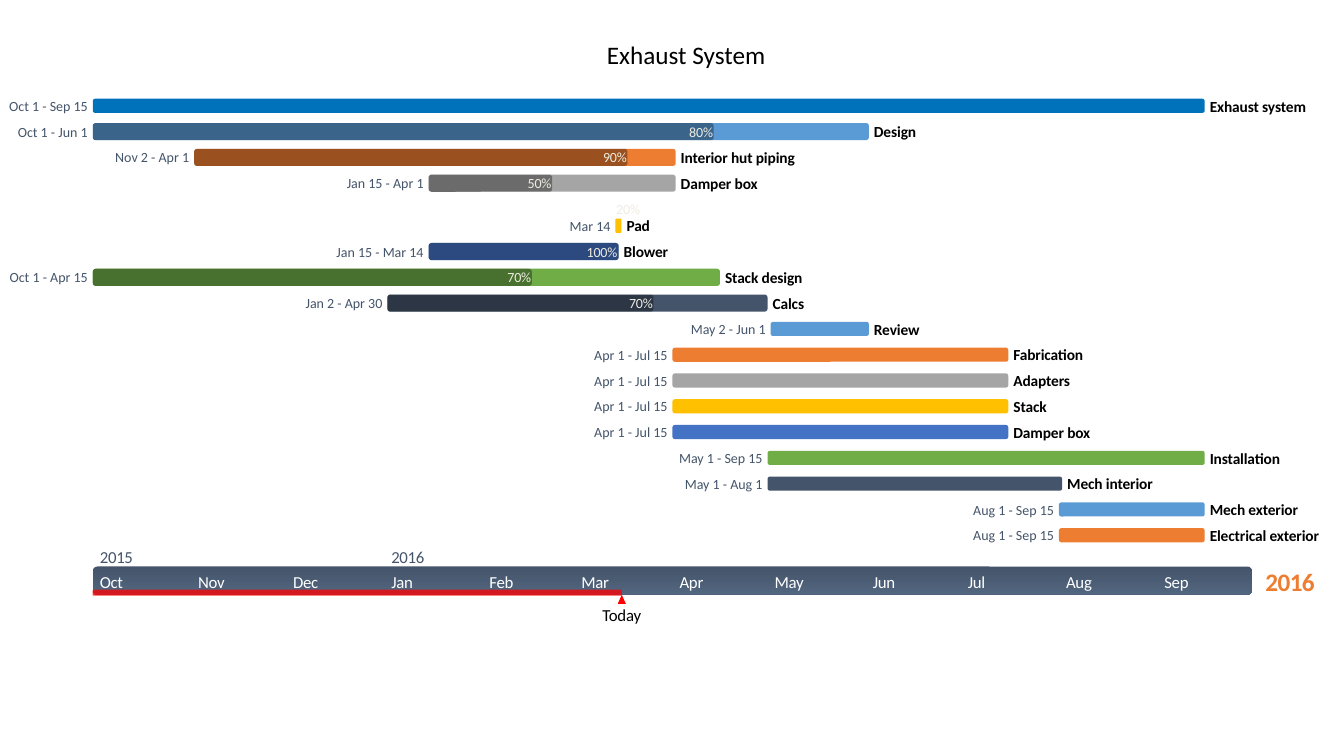
from lxml import etree
from pptx import Presentation
from pptx.dml.color import RGBColor
from pptx.enum.shapes import MSO_SHAPE
from pptx.enum.text import MSO_ANCHOR, PP_ALIGN
from pptx.oxml.ns import qn
from pptx.util import Inches, Pt

LEFT, CENTER, RIGHT = PP_ALIGN.LEFT, PP_ALIGN.CENTER, PP_ALIGN.RIGHT
MIDDLE = MSO_ANCHOR.MIDDLE
ROUNDED, TRIANGLE = MSO_SHAPE.ROUNDED_RECTANGLE, MSO_SHAPE.ISOSCELES_TRIANGLE

# Content
TITLE = "Exhaust System"
MONTHS = [("Oct", 31), ("Nov", 30), ("Dec", 31), ("Jan", 31), ("Feb", 29), ("Mar", 31),
          ("Apr", 30), ("May", 31), ("Jun", 30), ("Jul", 31), ("Aug", 31), ("Sep", 30)]
YEARS = [("2015", "Oct"), ("2016", "Jan")]
END_YEAR = "2016"
TODAY = "Mar 16"
TASKS = [  # name, dates, colour, percent complete
    ("Exhaust system", "Oct 1 - Sep 15", "ocean", None),
    ("Design", "Oct 1 - Jun 1", "sky", 80),
    ("Interior hut piping", "Nov 2 - Apr 1", "orange", 90),
    ("Damper box", "Jan 15 - Apr 1", "gray", 50),
    ("Pad", "Mar 14", "gold", 20),
    ("Blower", "Jan 15 - Mar 14", "blue", 100),
    ("Stack design", "Oct 1 - Apr 15", "green", 70),
    ("Calcs", "Jan 2 - Apr 30", "slate", 70),
    ("Review", "May 2 - Jun 1", "sky", None),
    ("Fabrication", "Apr 1 - Jul 15", "orange", None),
    ("Adapters", "Apr 1 - Jul 15", "gray", None),
    ("Stack", "Apr 1 - Jul 15", "gold", None),
    ("Damper box", "Apr 1 - Jul 15", "blue", None),
    ("Installation", "May 1 - Sep 15", "green", None),
    ("Mech interior", "May 1 - Aug 1", "slate", None),
    ("Mech exterior", "Aug 1 - Sep 15", "sky", None),
    ("Electrical exterior", "Aug 1 - Sep 15", "orange", None),
]
COLORS = {"ocean": "0072BC", "sky": "5B9BD5", "orange": "ED7D31", "gray": "A5A5A5",
          "gold": "FFC000", "blue": "4472C4", "green": "70AD47", "slate": "44546A",
          "slate_light": "52667F", "red": "FF0000", "black": "000000",
          "white": "FFFFFF", "cream": "EEECE1"}

# Text formats
TITLE_FMT = {"size": Pt(18), "bold": False}
DATE_FMT = {"size": Pt(10), "bold": False}
NAME_FMT = {"size": Pt(11), "bold": True}
AXIS_FMT = {"size": Pt(12), "bold": False}
YEAR_FMT = {"size": Pt(18), "bold": True}

# Layout in inches
AXIS_X, AXIS_Y, AXIS_W, AXIS_H = 0.92, 5.62, 11.5, 0.28
FIRST_ROW, PAD_ROW, LAST_ROW = 1.05, 2.24, 5.31
PAD_INDEX = 4
ROW_STEP = (LAST_ROW - PAD_ROW) / (len(TASKS) - 1 - PAD_INDEX)
GAP, MONTH_INSET, MIN_BAR = 0.05, 0.07, 0.06
DAY_W = AXIS_W / sum(days for _, days in MONTHS)

MONTH_START, elapsed = {}, 0
for month, days in MONTHS:
    MONTH_START[month] = elapsed
    elapsed += days


def date_x(date, days_after=0):
    month, day = date.split()
    return AXIS_X + (MONTH_START[month] + int(day) - 1 + days_after) * DAY_W


def row_center(i):
    if i < PAD_INDEX:
        return FIRST_ROW + i * ROW_STEP
    return PAD_ROW + (i - PAD_INDEX) * ROW_STEP


def format_text(tf, text, align, color, fmt, spacing):
    tf.margin_left = tf.margin_right = tf.margin_top = tf.margin_bottom = 0
    tf.word_wrap = True
    tf.vertical_anchor = MIDDLE
    p = tf.paragraphs[0]
    p.alignment = align
    r = p.add_run()
    r.text = text
    r.font.name = "Calibri"
    r.font.color.rgb = RGBColor.from_string(COLORS[color])
    for key, value in fmt.items():
        setattr(r.font, key, value)
    if spacing:
        r._r.get_or_add_rPr().set("spc", str(spacing))


def add_text(text, x, cy, w, h, align, color, fmt, spacing=0):
    tb = s.shapes.add_textbox(Inches(x), Inches(cy - h / 2), Inches(w), Inches(h))
    format_text(tb.text_frame, text, align, color, fmt, spacing)


def add_bar(x, y, w, h, color, alpha=100, kind=ROUNDED):
    sp = s.shapes.add_shape(kind, Inches(x), Inches(y), Inches(w), Inches(h))
    sp.shadow.inherit = False
    sp.line.fill.background()
    sp.fill.solid()
    sp.fill.fore_color.rgb = RGBColor.from_string(COLORS[color])
    if alpha < 100:
        clr = sp._element.spPr.find(qn("a:solidFill"))[0]
        etree.SubElement(clr, qn("a:alpha")).set("val", str(alpha * 1000))
    return sp


prs = Presentation()
prs.slide_width, prs.slide_height = Inches(13.33), Inches(7.5)
s = prs.slides.add_slide(prs.slide_layouts[5])

# Title
title = s.shapes.title
title.left, title.top, title.width, title.height = map(Inches, (3.43, 0.34, 6.75, 0.4))
format_text(title.text_frame, TITLE, CENTER, "black", TITLE_FMT, 0)

# Time axis
axis = add_bar(AXIS_X, AXIS_Y, AXIS_W, AXIS_H, "slate")
axis.fill.gradient()
axis.fill.gradient_angle = 270
for stop, position, color in zip(axis.fill.gradient_stops, (0, 1), ("slate", "slate_light")):
    stop.position = position
    stop.color.rgb = RGBColor.from_string(COLORS[color])
for month, _ in MONTHS:
    add_text(month, date_x(f"{month} 1") + MONTH_INSET, 5.77, 0.32, 0.19,
             LEFT, "white", AXIS_FMT, -20)
for year, month in YEARS:
    add_text(year, date_x(f"{month} 1") + MONTH_INSET, 5.52, 0.35, 0.2,
             LEFT, "slate", AXIS_FMT, -20)
add_text(END_YEAR, 12.52, 5.77, 0.55, 0.31, CENTER, "orange", YEAR_FMT, -40)

# Today marker
today_x = date_x(TODAY)
add_bar(AXIS_X, 5.85, today_x - AXIS_X, 0.06, "red", 75)
add_bar(today_x - 0.04, 5.9, 0.08, 0.09, "red", kind=TRIANGLE)
add_text("Today", today_x - 0.21, 6.1, 0.42, 0.2, CENTER, "black", AXIS_FMT, -10)

# Task rows
for i, (name, dates, color, percent) in enumerate(TASKS):
    first, last = dates.split(" - ")[0], dates.split(" - ")[-1]
    x, cy = date_x(first), row_center(i)
    w = max(date_x(last, 1) - x, MIN_BAR)
    is_short = w == MIN_BAR
    h = 0.14 if percent is None or is_short else 0.17
    add_bar(x, cy - h / 2, w, h, color)

    date_w = 0.05 * len(dates) + 0.15
    add_text(dates, x - GAP - date_w, cy, date_w, 0.17, RIGHT, "slate", DATE_FMT)
    add_text(name, x + w + GAP, cy, 0.08 * len(name) + 0.02, 0.19,
             LEFT, "black", NAME_FMT, -10)

    if percent is not None:
        label = f"{percent}%"
        label_w = 0.08 * len(label) + 0.01
        label_x, label_cy = x, cy - 0.17
        if not is_short:
            done_w = w * percent / 100
            add_bar(x, cy - h / 2, done_w, h, "black", 35)
            label_x, label_cy = x + done_w - label_w, cy
        add_text(label, label_x, label_cy, label_w, 0.17, CENTER, "cream", DATE_FMT, -10)

prs.save("out.pptx")
